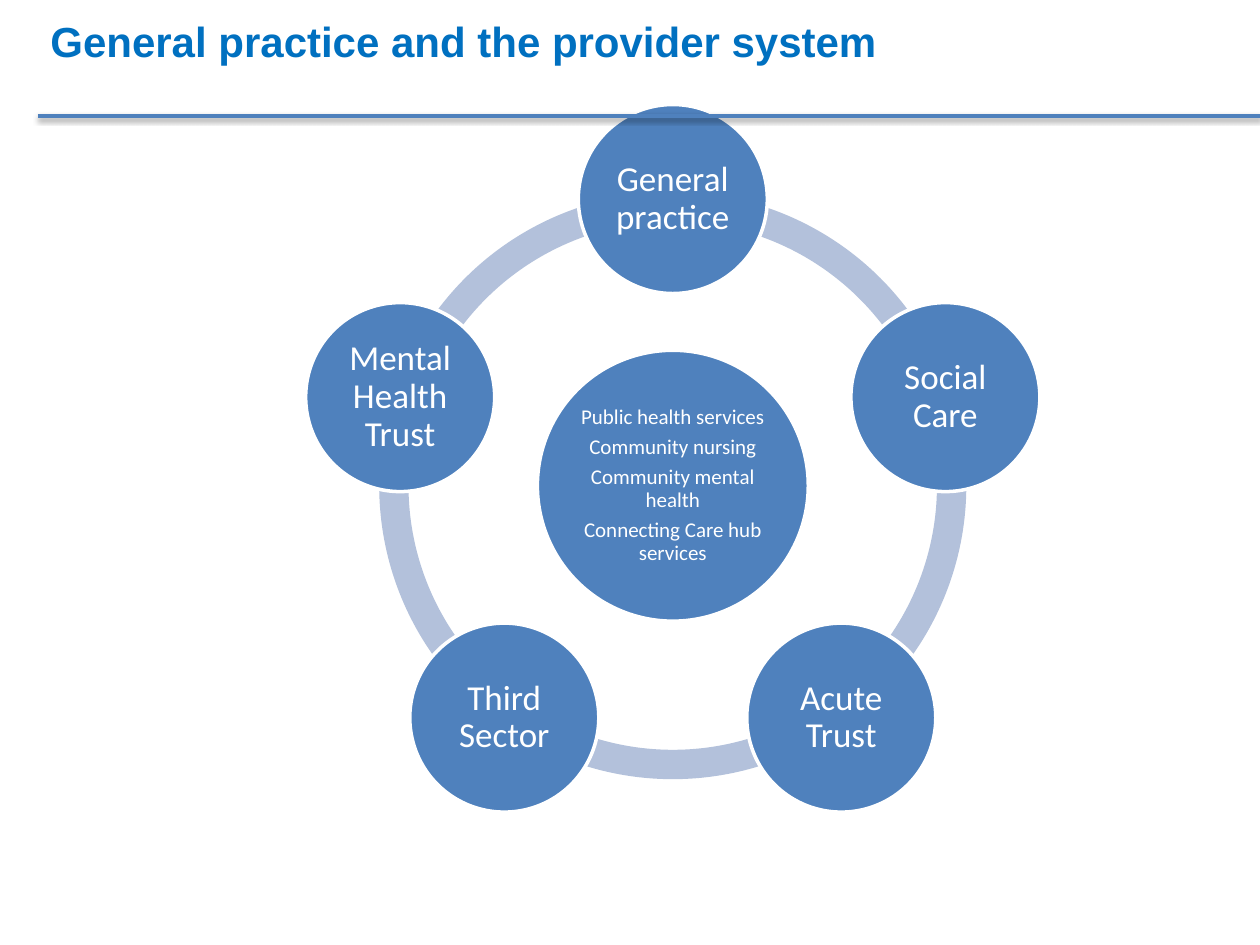
import math
from dataclasses import dataclass
from typing import Any

import lxml.etree
import pptx
import pptx.dml.color
import pptx.enum.shapes
import pptx.enum.text
import pptx.oxml.ns
import pptx.util

COLS, ROWS = 100, 75
SHAPE = pptx.enum.shapes.MSO_SHAPE
ANCHOR = pptx.enum.text.MSO_ANCHOR
ALIGN = pptx.enum.text.PP_ALIGN


@dataclass(frozen=True)
class Theme:
    blue: str = "4F81BD"
    pale: str = "B3C1DB"
    white: str = "FFFFFF"
    head: str = "0070C0"
    black: str = "000000"
    title: int = 24
    node: int = 20
    hub: int = 12
    edge: int = 2


@dataclass(frozen=True)
class Disc:
    lines: tuple[str, ...]
    col: float
    row: float
    size: float
    points: int
    inset: float


THEME = Theme()
MID_COL, MID_ROW = 53.4, 38.55
RING, ORBIT = 46.6, 22.75
NODE, HUB = 15, 21.5
THICK = 0.05
NAMES = ("General practice", "Social Care", "Acute Trust", "Third Sector", "Mental Health Trust")
CORE = (
    "Public health services",
    "Community nursing",
    "Community mental health",
    "Connecting Care hub services",
)
STEP = 360 / len(NAMES)
START = 270


def grid(cells: float) -> int:
    return pptx.util.Inches(cells * 10 / COLS)


def tint(code: str) -> pptx.dml.color.RGBColor:
    return pptx.dml.color.RGBColor.from_string(code)


def apply(target: Any, values: dict[str, Any]) -> None:
    for name, value in values.items():
        setattr(target, name, value)


def style(font: Any, face: str, size: int, code: str, bold: bool = False) -> None:
    apply(font, {"name": face, "size": pptx.util.Pt(size), "bold": bold})
    font.color.rgb = tint(code)


def place(shapes: Any, kind: Any, col: float, row: float, size: float, code: str) -> Any:
    shape = shapes.add_shape(
        kind, grid(col - size / 2), grid(row - size / 2), grid(size), grid(size)
    )
    shape.shadow.inherit = False
    shape.fill.solid()
    shape.fill.fore_color.rgb = tint(code)
    shape.line.fill.background()
    return shape


def draw_arc(shapes: Any, angle: float) -> None:
    arc = place(shapes, SHAPE.BLOCK_ARC, MID_COL, MID_ROW, RING, THEME.pale)
    values = (angle % 360 * 0.6, (angle + STEP) % 360 * 0.6, THICK)
    for index, value in enumerate(values):
        arc.adjustments[index] = value


def draw_disc(shapes: Any, disc: Disc) -> None:
    shape = place(shapes, SHAPE.OVAL, disc.col, disc.row, disc.size, THEME.blue)
    shape.line.color.rgb = tint(THEME.white)
    shape.line.width = pptx.util.Pt(THEME.edge)
    frame = shape.text_frame
    pad = pptx.util.Inches(disc.inset)
    apply(frame, {
        "word_wrap": True,
        "vertical_anchor": ANCHOR.MIDDLE,
        "margin_left": pad,
        "margin_right": pad,
        "margin_top": pad,
        "margin_bottom": pad,
    })
    frame.text = "\n".join(disc.lines)
    for para in frame.paragraphs:
        apply(para, {
            "alignment": ALIGN.CENTER,
            "line_spacing": 0.9,
            "space_after": pptx.util.Pt(disc.points * 0.35),
        })
        style(para.runs[0].font, "Calibri", disc.points, THEME.white)


def draw_title(slide: Any, text: str) -> None:
    title = slide.shapes.title
    apply(title, {"left": grid(3), "top": 0, "width": grid(75.4), "height": grid(12.5)})
    frame = title.text_frame
    frame.text = text
    apply(frame, {
        "word_wrap": True,
        "vertical_anchor": ANCHOR.TOP,
        "auto_size": pptx.enum.text.MSO_AUTO_SIZE.NONE,
    })
    para = frame.paragraphs[0]
    apply(para, {"alignment": ALIGN.LEFT, "line_spacing": pptx.util.Pt(34)})
    style(para.runs[0].font, "Arial", THEME.title, THEME.head, True)


def draw_rule(shapes: Any, row: float) -> None:
    rule = shapes.add_connector(
        pptx.enum.shapes.MSO_CONNECTOR.STRAIGHT, grid(3), grid(row), grid(COLS), grid(row)
    )
    rule.line.color.rgb = tint(THEME.blue)
    rule.line.width = pptx.util.Pt(THEME.edge)
    name = pptx.oxml.ns.qn
    props = rule.line._get_or_add_ln().getparent()
    effect = lxml.etree.SubElement(props, name("a:effectLst"))
    shade = lxml.etree.SubElement(effect, name("a:outerShdw"), {
        "blurRad": str(pptx.util.Pt(3.1)),
        "dist": str(pptx.util.Pt(1.6)),
        "dir": str(90 * 60000),
        "rotWithShape": "0",
    })
    color = lxml.etree.SubElement(shade, name("a:srgbClr"), val=THEME.black)
    lxml.etree.SubElement(color, name("a:alpha"), val="38000")


def main() -> None:
    deck = pptx.Presentation()
    apply(deck, {"slide_width": grid(COLS), "slide_height": grid(ROWS)})
    slide = deck.slides.add_slide(deck.slide_layouts[5])
    shapes = slide.shapes
    draw_title(slide, "General practice and the provider system")
    turns = [START + STEP * index for index in range(len(NAMES))]
    for turn in turns:
        draw_arc(shapes, turn)
    draw_disc(shapes, Disc(CORE, MID_COL, MID_ROW, HUB, THEME.hub, 0.02))
    for label, turn in zip(NAMES, turns):
        angle = math.radians(turn)
        col = MID_COL + ORBIT * math.cos(angle)
        row = MID_ROW + ORBIT * math.sin(angle)
        draw_disc(shapes, Disc((label,), col, row, NODE, THEME.node, 0.03))
    draw_rule(shapes, 9.2)
    deck.save("out.pptx")


if __name__ == "__main__":
    main()
